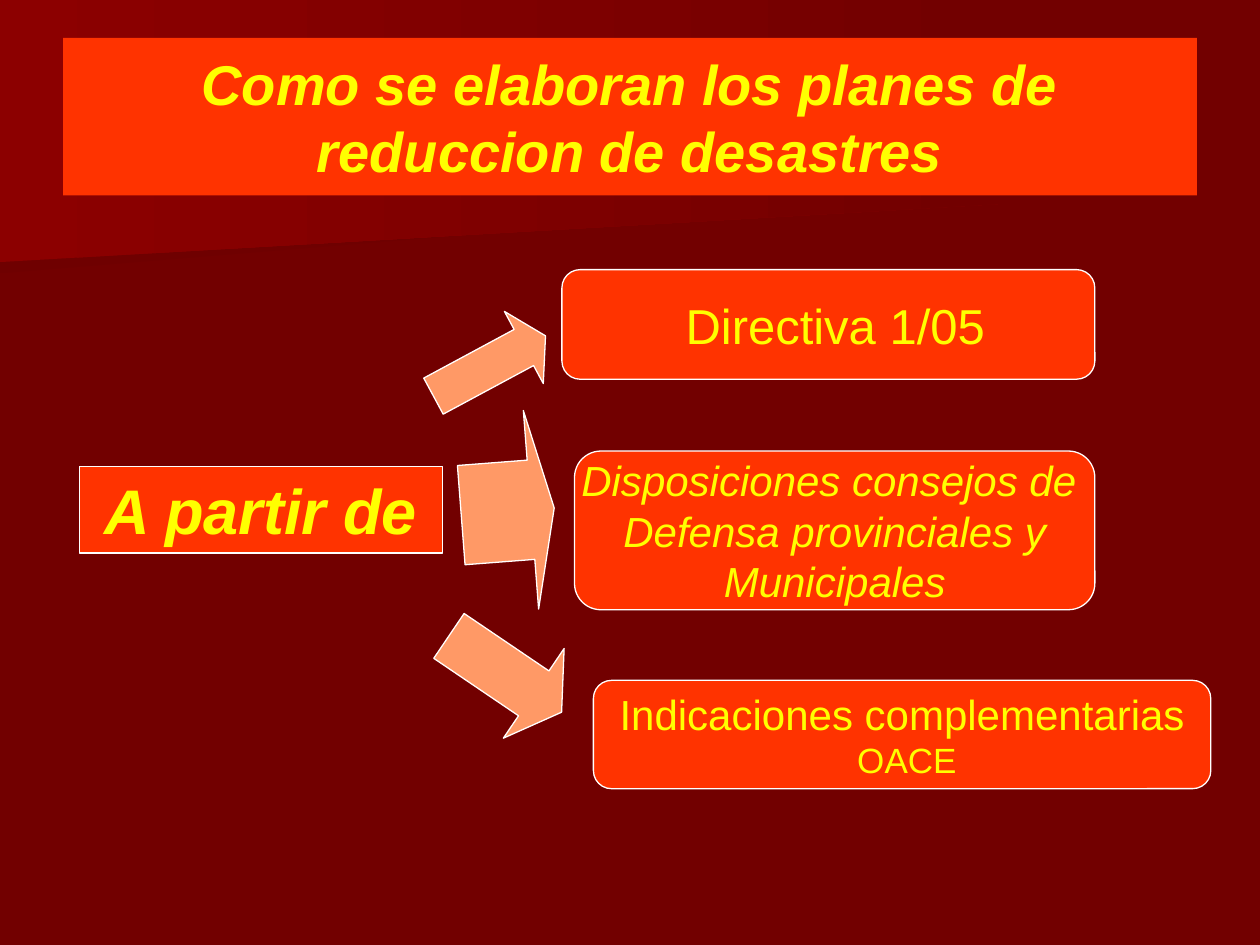
"""Build the slide on how disaster reduction plans are drawn up."""
from pptx import Presentation
from pptx.dml.color import RGBColor
from pptx.enum.shapes import MSO_SHAPE
from pptx.enum.text import MSO_ANCHOR, MSO_AUTO_SIZE, PP_ALIGN
from pptx.util import Inches, Pt

RED, YELLOW, ORANGE, WHITE, MAROON = "FF3300", "FFFF00", "FF9966", "FFFFFF", "720000"


def color(value):
    return RGBColor.from_string(value)


def style(shape, fill, lines=(), bold=False, italic=False, outlined=True):
    shape.fill.solid()
    shape.fill.fore_color.rgb = color(fill)
    if outlined:
        shape.shadow.inherit = False
        shape.line.color.rgb = color(WHITE)
        shape.line.width = Pt(0.75)
    if not lines:
        return
    text_frame = shape.text_frame
    text_frame.text = "\n".join(text for text, size in lines)
    text_frame.word_wrap = not outlined
    text_frame.auto_size = MSO_AUTO_SIZE.NONE
    text_frame.vertical_anchor = MSO_ANCHOR.MIDDLE
    for paragraph, (text, size) in zip(text_frame.paragraphs, lines):
        paragraph.alignment = PP_ALIGN.CENTER
        for run in paragraph.runs:
            run.font.name = "Arial"
            run.font.size = Pt(size)
            run.font.bold = bold
            run.font.italic = italic
            run.font.color.rgb = color(YELLOW)


presentation = Presentation()
presentation.slide_width = Inches(10)
presentation.slide_height = Inches(7.5)
slide = presentation.slides.add_slide(presentation.slide_layouts[5])
shapes = slide.shapes
slide.background.fill.solid()
slide.background.fill.fore_color.rgb = color(MAROON)

title = shapes.title
bands = [
    ("6F0000", [(7.78, 1.53), (0, 2.17), (0, 1.01), (7.79, 1.01), (7.78, 1.28)]),
    ("8C0000", [(7.92, 1.62), (0, 2.08), (0, 0), (7.92, 0)]),
]
for start_color, points in bands:
    corners = [(Inches(x), Inches(y)) for x, y in points]
    builder = shapes.build_freeform(*corners[0])
    builder.add_line_segments(corners[1:], close=True)
    band = builder.convert_to_shape()
    band.shadow.inherit = False
    band.line.fill.background()
    band.fill.gradient()
    band.fill.gradient_angle = 0
    for stop, value in zip(band.fill.gradient_stops, (start_color, MAROON)):
        stop.color.rgb = color(value)
    title._element.addprevious(band._element)

title.left, title.top = Inches(0.5), Inches(0.3)
title.width, title.height = Inches(9), Inches(1.25)
style(title, RED, [("Como se elaboran los planes de reduccion de desastres", 32)],
      bold=True, italic=True, outlined=False)

source_box = shapes.add_shape(
    MSO_SHAPE.RECTANGLE, Inches(0.63), Inches(3.7), Inches(2.88), Inches(0.69))
style(source_box, RED, [("A partir de", 36)], bold=True, italic=True)

branches = [
    ((4.46, 2.14, 4.23, 0.87), [(" Directiva 1/05", 28)], False,
     (3.38, 2.58, 1.01, 0.65), 331.7, 0.3),
    ((4.56, 3.58, 4.13, 1.26),
     [("Disposiciones consejos de ", 24), ("Defensa provinciales y", 24), ("Municipales", 24)],
     True, (3.66, 3.27, 0.74, 1.58), 355.6, 0.25),
    ((4.71, 5.4, 4.9, 0.86), [("Indicaciones complementarias", 24), (" OACE", 20)], False,
     (3.47, 4.92, 1.08, 0.86), 34.1, 0.31),
]
for box_place, lines, italic, arrow_place, rotation, head in branches:
    box = shapes.add_shape(MSO_SHAPE.ROUNDED_RECTANGLE, *map(Inches, box_place))
    style(box, RED, lines, italic=italic)
    arrow = shapes.add_shape(MSO_SHAPE.RIGHT_ARROW, *map(Inches, arrow_place))
    arrow.adjustments[1] = head
    arrow.rotation = rotation
    style(arrow, ORANGE)

presentation.save("out.pptx")
